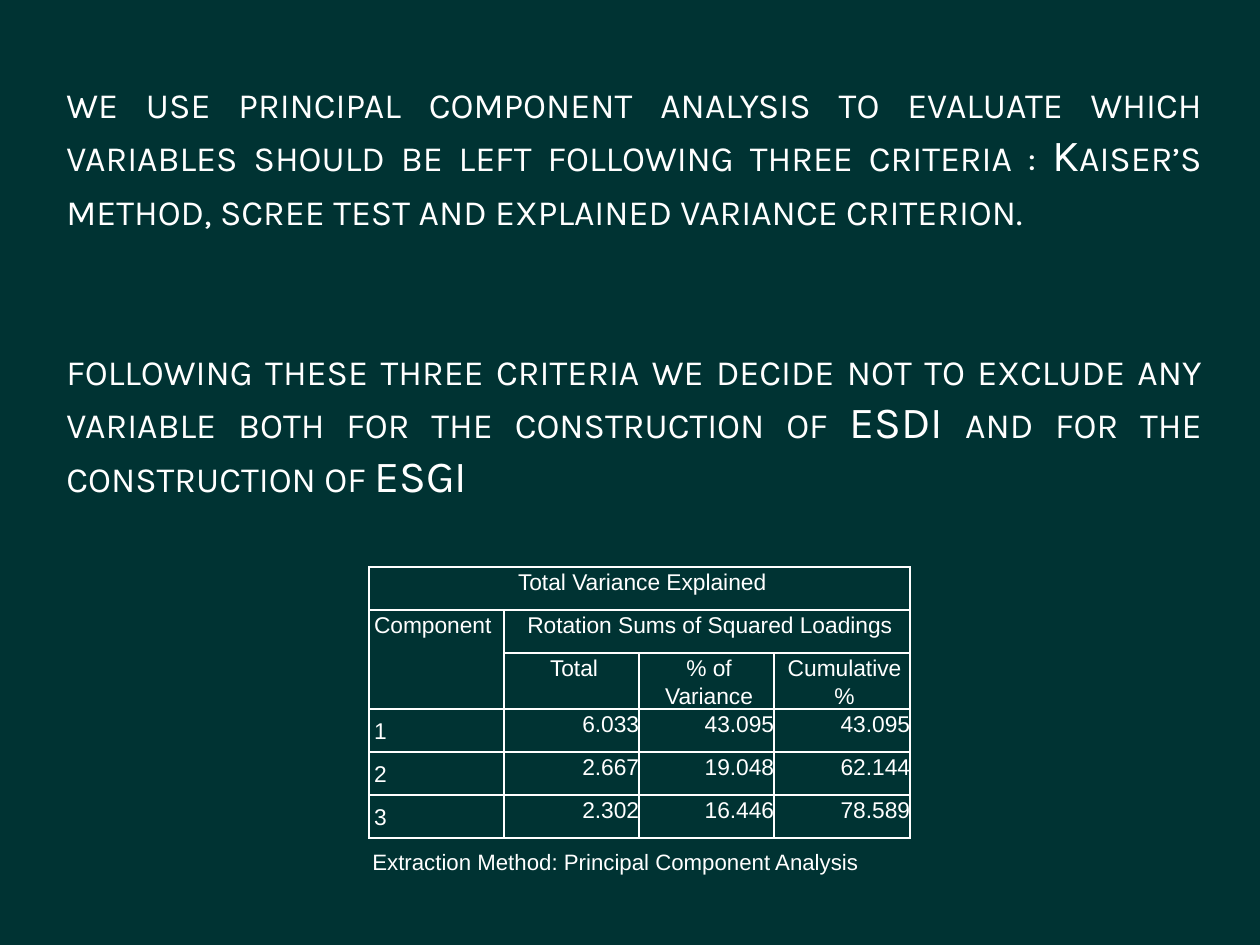
from lxml.etree import SubElement
from pptx import Presentation
from pptx.dml.color import RGBColor
from pptx.enum.text import MSO_ANCHOR, PP_ALIGN
from pptx.oxml.ns import qn
from pptx.util import Pt

PX = 914400 / 126
COLORS = {"background": "003333", "light": "FFFFFF"}
INTRODUCTION = [
    "we use principal component analysis to evaluate which variables should be left "
    "following three criteria : Kaiser’s method, scree test and explained variance criterion.",
    "following these three criteria we decide not to exclude any variable both for the "
    "construction of ESDI and for the construction of ESGI",
]
HEADINGS = [
    ["Total Variance Explained", "", "", ""],
    ["Component", "Rotation Sums of Squared Loadings", "", ""],
    ["", "Total", "% of Variance", "Cumulative %"],
]
LOADINGS = [
    ["1", "6.033", "43.095", "43.095"],
    ["2", "2.667", "19.048", "62.144"],
    ["3", "2.302", "16.446", "78.589"],
]
MERGES = [((0, 0), (0, 3)), ((1, 0), (2, 0)), ((1, 1), (1, 3))]


def px(length):
    return round(length * PX)


def write(paragraph, text, font="Arial", size=13, color="light", align=PP_ALIGN.LEFT,
          small_caps=False, before=0, line=None, indent=0):
    paragraph.alignment = align
    paragraph.space_before = Pt(before)
    if line:
        paragraph.line_spacing = Pt(line)
    if indent:
        paragraph._p.get_or_add_pPr().set("marL", str(px(indent)))
    run = paragraph.add_run()
    run.text = text
    run.font.name = font
    run.font.size = Pt(size)
    run.font.color.rgb = RGBColor.from_string(COLORS[color])
    if small_caps:
        run._r.get_or_add_rPr().set("cap", "small")


class SlideBuilder:
    def __init__(self, presentation):
        self.slide = presentation.slides.add_slide(presentation.slide_layouts[6])
        fill = self.slide.background.fill
        fill.solid()
        fill.fore_color.rgb = RGBColor.from_string(COLORS["background"])

    def text(self, box, paragraphs, gap=0, **style):
        frame = self.slide.shapes.add_textbox(*map(px, box)).text_frame
        frame.word_wrap = True
        for index, text in enumerate(paragraphs):
            paragraph = frame.add_paragraph() if index else frame.paragraphs[0]
            write(paragraph, text, before=gap if index else 0, **style)

    def border(self, cell):
        properties = cell._tc.get_or_add_tcPr()
        for side in ("lnL", "lnR", "lnT", "lnB"):
            line = SubElement(properties, qn(f"a:{side}"), w=str(Pt(1)))
            fill = SubElement(line, qn("a:solidFill"))
            SubElement(fill, qn("a:srgbClr"), val=COLORS["light"])

    def table(self, left, top, widths, heights, rows, merges, header_rows):
        table = self.slide.shapes.add_table(
            len(rows), len(widths), px(left), px(top), px(sum(widths)), px(sum(heights))
        ).table
        table.first_row = table.horz_banding = False
        for column, width in zip(table.columns, widths):
            column.width = px(width)
        for row, height in zip(table.rows, heights):
            row.height = px(height)
        for start, end in merges:
            table.cell(*start).merge(table.cell(*end))
        for row_index, row in enumerate(rows):
            for column_index, text in enumerate(row):
                cell = table.cell(row_index, column_index)
                self.border(cell)
                cell.fill.background()
                cell.margin_left = cell.margin_right = cell.margin_top = cell.margin_bottom = 0
                if not text:
                    continue
                is_header = row_index < header_rows
                align = PP_ALIGN.CENTER if is_header else PP_ALIGN.RIGHT
                if column_index == 0:
                    align = PP_ALIGN.CENTER if row_index == 0 else PP_ALIGN.LEFT
                    if not is_header:
                        cell.vertical_anchor = MSO_ANCHOR.MIDDLE
                write(cell.text_frame.paragraphs[0], text, align=align, line=16, indent=5)


def main():
    presentation = Presentation()
    presentation.slide_width, presentation.slide_height = px(1260), px(945)
    builder = SlideBuilder(presentation)
    builder.text((54, 68, 1160, 513), INTRODUCTION, gap=61, font="Karla", size=25.4,
                 align=PP_ALIGN.JUSTIFY, small_caps=True)
    builder.table(369, 567, [135, 135, 135, 136], [43, 43, 56, 43, 43, 43],
                  HEADINGS + LOADINGS, MERGES, len(HEADINGS))
    builder.text((360, 842, 720, 39), ["Extraction Method: Principal Component Analysis"],
                 size=12.7)
    presentation.save("out.pptx")


if __name__ == "__main__":
    main()
